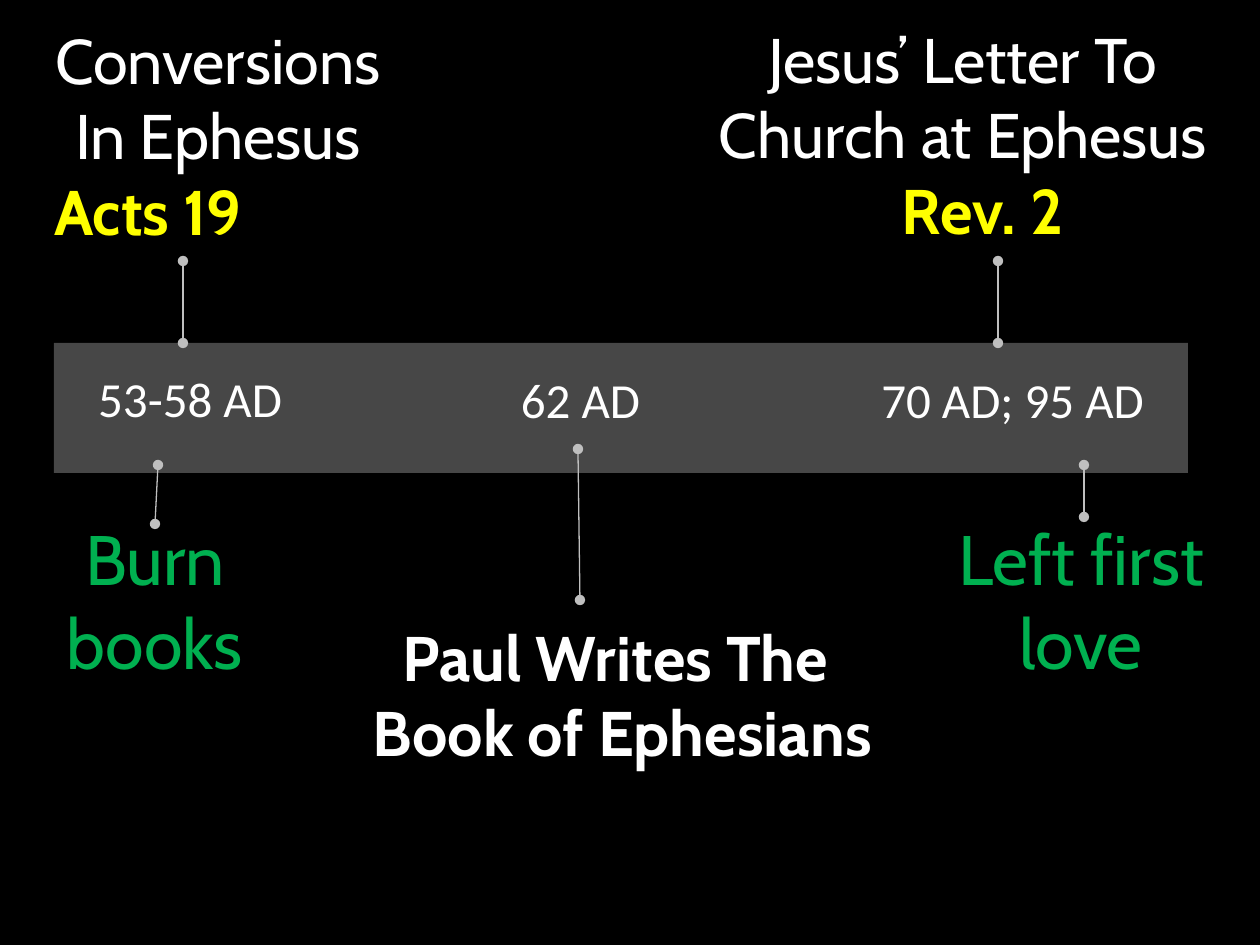
from dataclasses import dataclass

from lxml import etree
from pptx import Presentation
from pptx.dml.color import RGBColor
from pptx.enum import shapes, text
from pptx.oxml import ns
from pptx.util import Emu, Pt

PX = 914400 // 126
BLACK = RGBColor(0, 0, 0)
WHITE = RGBColor(255, 255, 255)
GRAY = RGBColor(0x59, 0x59, 0x59)
SILVER = RGBColor(0xBF, 0xBF, 0xBF)
YELLOW = RGBColor(255, 255, 0)
GREEN = RGBColor(0, 0xB0, 0x50)
MID = text.PP_ALIGN.CENTER
LEFT = text.PP_ALIGN.LEFT


@dataclass
class Box:
    x: int
    y: int
    w: int
    h: int


@dataclass
class Label:
    box: Box
    words: str
    size: int
    font: str = "Cabin"
    color: RGBColor = WHITE
    bold: bool = False
    wrap: bool = True


@dataclass
class Verse:
    words: str
    align: int
    indent: int


@dataclass
class Event:
    label: Label
    verse: Verse


@dataclass
class Link:
    x1: int
    y1: int
    x2: int
    y2: int


DATES = [
    Label(Box(74, 362, 232, 72), "53-58 AD", 28, "Calibri", wrap=False),
    Label(Box(489, 363, 183, 72), "62 AD", 28, "Calibri"),
    Label(Box(851, 363, 323, 72), "70 AD; 95 AD", 28, "Calibri", wrap=False),
]
EVENTS = [
    Event(Label(Box(15, 15, 406, 285), "Conversions In Ephesus", 36),
          Verse("Acts 19", LEFT, 27)),
    Event(Label(Box(679, 14, 568, 285), "Jesus’ Letter To Church at Ephesus", 36),
          Verse("Rev. 2", MID, 40)),
]
NOTES = [
    Label(Box(281, 612, 683, 208), "Paul Writes The \nBook of Ephesians", 36, bold=True),
    Label(Box(4, 509, 302, 224), "Burn books", 40, color=GREEN),
    Label(Box(930, 509, 302, 224), "Left first love", 40, color=GREEN),
]
LINKS = [
    Link(183, 261, 183, 343),
    Link(578, 449, 580, 600),
    Link(998, 261, 998, 343),
    Link(158, 465, 155, 524),
    Link(1084, 465, 1084, 517),
]


def px(*vals: int) -> list[Emu]:
    return [Emu(v * PX) for v in vals]


def write(par, words: str, *, size: int, font: str = "Cabin", color: RGBColor = WHITE,
          bold: bool = False, align: int = MID, indent: int = 0) -> None:
    par.alignment = align
    if indent:
        par._p.get_or_add_pPr().set("marL", str(indent * PX))
    run = par.add_run()
    run.text = words
    run.font.size = Pt(size)
    run.font.name = font
    run.font.bold = bold
    run.font.color.rgb = color


def add_label(slide, label: Label):
    box = label.box
    frame = slide.shapes.add_textbox(*px(box.x, box.y, box.w, box.h)).text_frame
    frame.word_wrap = label.wrap
    for i, line in enumerate(label.words.split("\n")):
        par = frame.add_paragraph() if i else frame.paragraphs[0]
        write(par, line, size=label.size, font=label.font, color=label.color,
              bold=label.bold)
    return frame


def add_event(slide, event: Event) -> None:
    verse = event.verse
    frame = add_label(slide, event.label)
    write(frame.add_paragraph(), verse.words, size=event.label.size, color=YELLOW,
          bold=True, align=verse.align, indent=verse.indent)


def add_link(slide, link: Link) -> None:
    line = slide.shapes.add_connector(
        shapes.MSO_CONNECTOR.STRAIGHT, *px(link.x1, link.y1, link.x2, link.y2))
    line.line.color.rgb = SILVER
    line.line.width = Pt(0.75)
    for end in ("a:headEnd", "a:tailEnd"):
        etree.SubElement(line.line._get_or_add_ln(), ns.qn(end), type="oval")
    etree.SubElement(line._element.spPr, ns.qn("a:effectLst"))


def add_bar(slide, box: Box) -> None:
    bar = slide.shapes.add_shape(
        shapes.MSO_SHAPE.RECTANGLE, *px(box.x, box.y, box.w, box.h))
    bar.shadow.inherit = False
    bar.line.fill.background()
    bar.fill.solid()
    bar.fill.fore_color.rgb = GRAY
    tint = bar._element.spPr.find(".//" + ns.qn("a:srgbClr"))
    etree.SubElement(tint, ns.qn("a:alpha"), val="80000")


def main() -> None:
    deck = Presentation()
    deck.slide_width, deck.slide_height = px(1260, 945)
    slide = deck.slides.add_slide(deck.slide_layouts[6])
    slide.background.fill.solid()
    slide.background.fill.fore_color.rgb = BLACK
    add_bar(slide, Box(54, 343, 1134, 130))
    for label in DATES + NOTES:
        add_label(slide, label)
    for event in EVENTS:
        add_event(slide, event)
    for link in LINKS:
        add_link(slide, link)
    deck.save("out.pptx")


if __name__ == "__main__":
    main()
